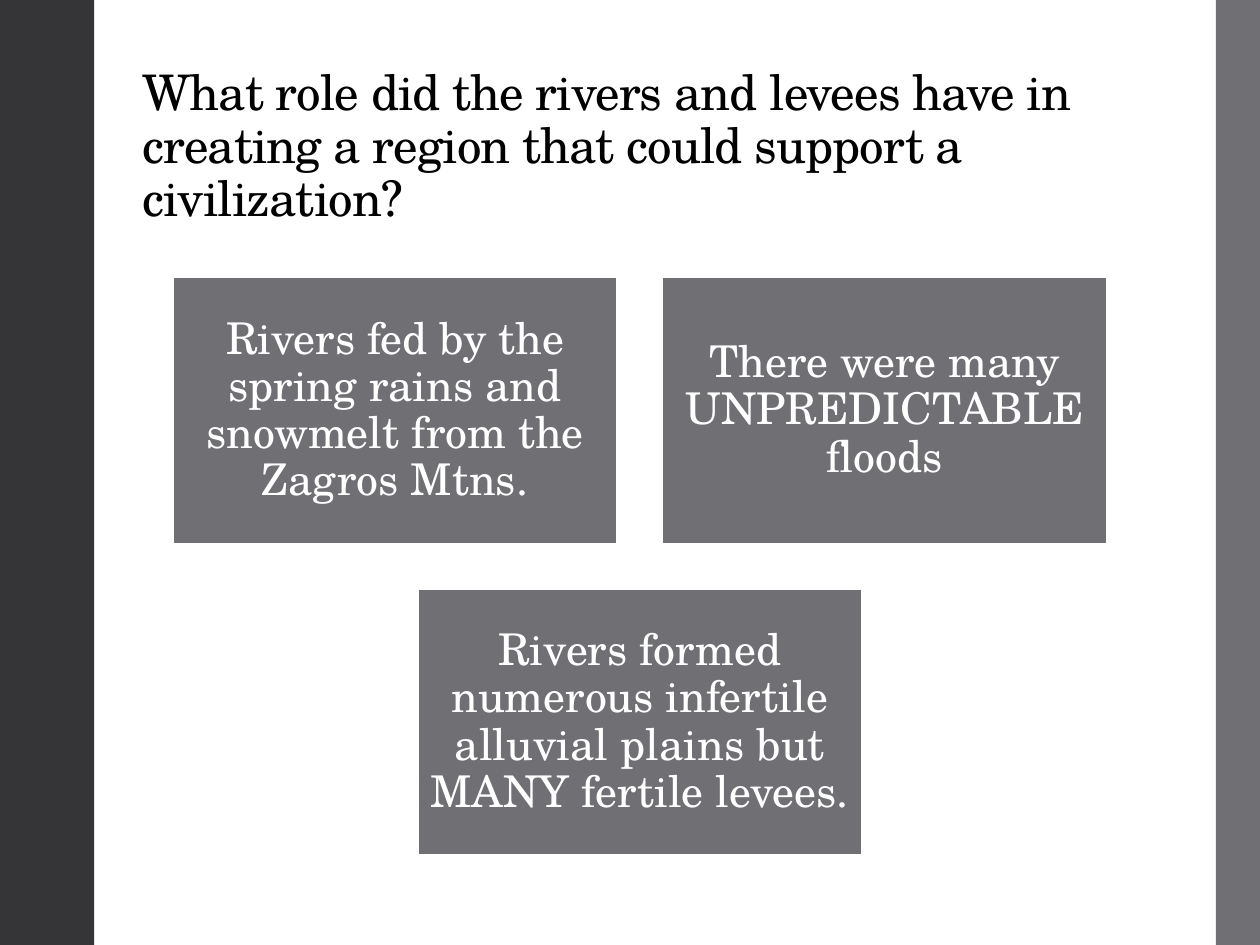
from pptx import Presentation
from pptx import util as u
from pptx.dml.color import RGBColor
from pptx.enum import shapes, text

DARK = RGBColor(0x35, 0x35, 0x37)
GRAY = RGBColor(0x6F, 0x6F, 0x74)
WHITE = RGBColor(0xFF, 0xFF, 0xFF)
BLACK = RGBColor(0, 0, 0)
FONT = "TeX Gyre Schola"

SLIDE_WIDTH, SLIDE_HEIGHT = 25.4, 19.05
CARD_WIDTH, CARD_HEIGHT, CARD_GAP = 8.97, 5.38, 0.9
CARDS_LEFT, CARDS_TOP = 3.48, 5.59
CARD_ROWS = [
    [
        "Rivers fed by the spring rains and snowmelt from the Zagros Mtns.",
        "There were many UNPREDICTABLE floods",
    ],
    ["Rivers formed numerous infertile alluvial plains but MANY fertile levees."],
]


def add_rectangle(slide, left, top, width, height, fill):
    shape = slide.shapes.add_shape(
        shapes.MSO_SHAPE.RECTANGLE, u.Cm(left), u.Cm(top), u.Cm(width), u.Cm(height)
    )
    shape.shadow.inherit = False
    shape.fill.solid()
    shape.fill.fore_color.rgb = fill
    shape.line.fill.background()
    return shape


def write_text(frame, content, size, color, alignment):
    frame.word_wrap = True
    paragraph = frame.paragraphs[0]
    paragraph.alignment = alignment
    paragraph.line_spacing = 0.9
    run = paragraph.add_run()
    run.text = content
    run.font.name = FONT
    run.font.size = u.Pt(size)
    run.font.color.rgb = color
    return run


def add_title(slide, content):
    title = slide.shapes.title
    title.left, title.top = u.Cm(2.62), u.Cm(1.02)
    title.width, title.height = u.Cm(20.55), u.Cm(3.68)
    frame = title.text_frame
    frame.auto_size = text.MSO_AUTO_SIZE.NONE
    frame.vertical_anchor = text.MSO_ANCHOR.BOTTOM
    run = write_text(frame, content, 28, BLACK, text.PP_ALIGN.LEFT)
    run.font._element.set("spc", "-50")


def add_card(slide, left, top, content):
    card = add_rectangle(slide, left, top, CARD_WIDTH, CARD_HEIGHT, GRAY)
    card.line.color.rgb = WHITE
    card.line.width = u.Pt(1.35)
    frame = card.text_frame
    frame.margin_left = frame.margin_right = u.Cm(0.25)
    frame.margin_top = frame.margin_bottom = u.Cm(0.25)
    frame.vertical_anchor = text.MSO_ANCHOR.MIDDLE
    write_text(frame, content, 25, WHITE, text.PP_ALIGN.CENTER)


def add_card_rows(slide):
    """Centre each row of cards on the middle of the widest row."""
    step = CARD_WIDTH + CARD_GAP
    widest = max(len(row) for row in CARD_ROWS)
    for row_index, row in enumerate(CARD_ROWS):
        left = CARDS_LEFT + (widest - len(row)) * step / 2
        top = CARDS_TOP + row_index * (CARD_HEIGHT + CARD_GAP)
        for column, content in enumerate(row):
            add_card(slide, left + column * step, top, content)


def main():
    presentation = Presentation()
    presentation.slide_width = u.Cm(SLIDE_WIDTH)
    presentation.slide_height = u.Cm(SLIDE_HEIGHT)
    slide = presentation.slides.add_slide(presentation.slide_layouts[5])
    slide.background.fill.solid()
    slide.background.fill.fore_color.rgb = WHITE

    add_title(
        slide,
        "What role did the rivers and levees have in creating a region "
        "that could support a civilization?",
    )
    add_rectangle(slide, 0, 0, 1.9, SLIDE_HEIGHT, DARK)
    add_rectangle(slide, 24.51, 0, SLIDE_WIDTH - 24.51, SLIDE_HEIGHT, GRAY)
    add_card_rows(slide)
    presentation.save("out.pptx")


if __name__ == "__main__":
    main()
